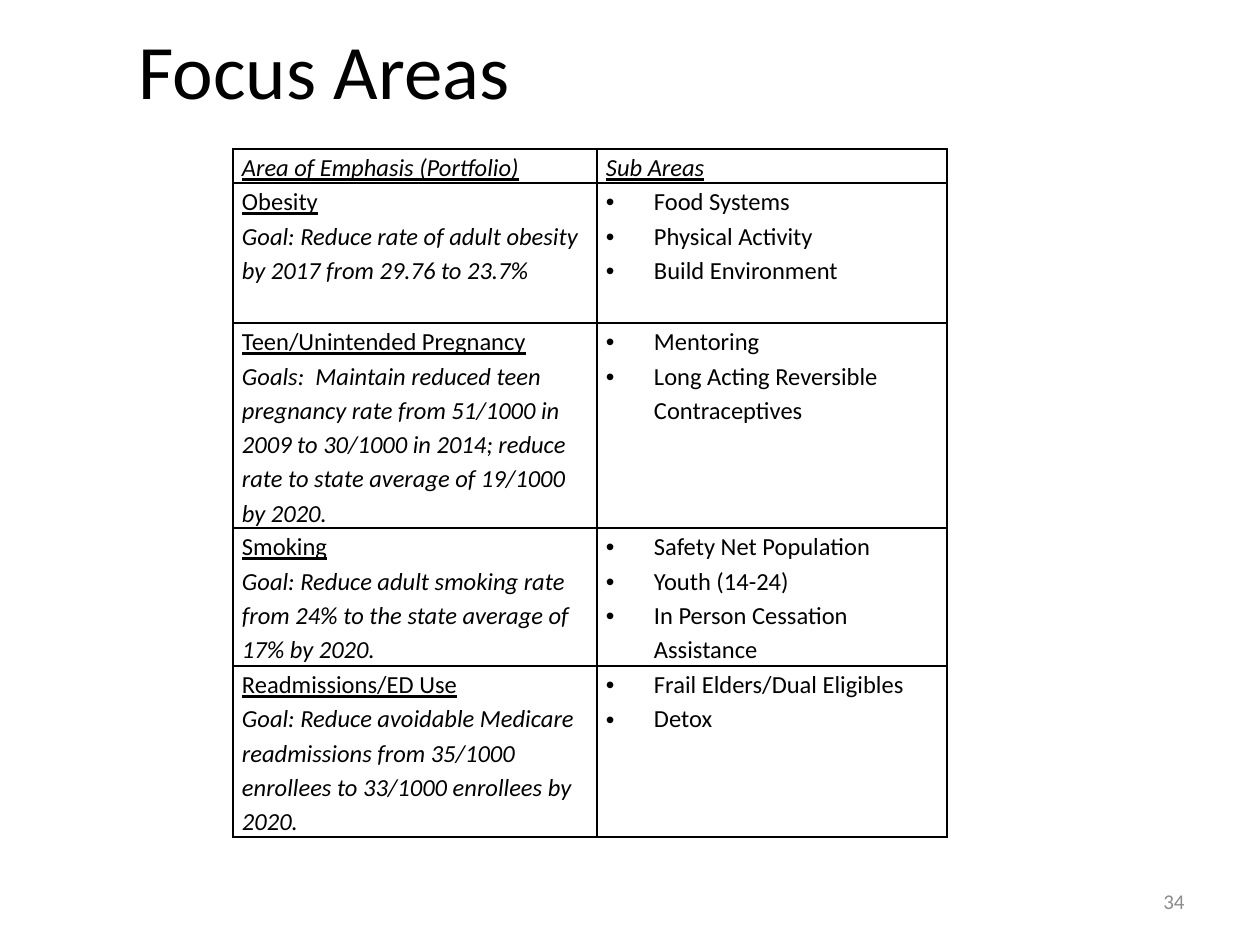
from pptx import Presentation
from pptx.dml.color import RGBColor
from pptx.enum.text import MSO_ANCHOR as Anchor, PP_ALIGN as Align
from pptx.oxml.ns import qn
from pptx.util import Emu, Pt
from lxml.etree import SubElement, Element

EMU_PER_PX = 914400 // 126
FONT = "Calibri"
BLACK = RGBColor(0x00, 0x00, 0x00)
GRAY = RGBColor(0x8C, 0x8C, 0x8C)

COLUMN_WIDTHS = [364, 350]
ROW_HEIGHTS = [34, 140, 205, 138, 171]
HEADINGS = ["Area of Emphasis (Portfolio)", "Sub Areas"]
FOCUS_AREAS = [
    ("Obesity",
     "Goal: Reduce rate of adult obesity by 2017 from 29.76 to 23.7%",
     ["Food Systems", "Physical Activity", "Build Environment"]),
    ("Teen/Unintended Pregnancy",
     "Goals:  Maintain reduced teen pregnancy rate from 51/1000 in 2009 "
     "to 30/1000 in 2014; reduce rate to state average of 19/1000 by 2020.",
     ["Mentoring", "Long Acting Reversible Contraceptives"]),
    ("Smoking",
     "Goal: Reduce adult smoking rate from 24% to the state average of 17% by 2020.",
     ["Safety Net Population", "Youth (14-24)", "In Person Cessation Assistance"]),
    ("Readmissions/ED Use",
     "Goal: Reduce avoidable Medicare readmissions from 35/1000 enrollees "
     "to 33/1000 enrollees by 2020.",
     ["Frail Elders/Dual Eligibles", "Detox"]),
]


def px(length):
    return Emu(length * EMU_PER_PX)


def add_bullet(paragraph, indent=48):
    properties = paragraph._p.get_or_add_pPr()
    properties.set("marL", str(px(indent)))
    properties.set("indent", str(-px(indent)))
    SubElement(properties, qn("a:buFont"), typeface="Arial")
    SubElement(properties, qn("a:buChar"), char="•")


def write(frame, text, first=True, size=14, color=BLACK, italic=False,
          underline=False, bullet=False, align=Align.LEFT, spacing=1.15):
    paragraph = frame.paragraphs[0] if first else frame.add_paragraph()
    if bullet:
        add_bullet(paragraph)
    paragraph.alignment = align
    paragraph.line_spacing = spacing
    run = paragraph.add_run()
    run.text = text
    font = run.font
    font.name, font.size, font.bold = FONT, Pt(size), False
    font.italic, font.underline = italic, underline
    font.color.rgb = color


def add_text_box(slide, left, top, width, height, text, **text_format):
    box = slide.shapes.add_textbox(px(left), px(top), px(width), px(height))
    frame = box.text_frame
    frame.word_wrap = True
    frame.vertical_anchor = Anchor.MIDDLE
    write(frame, text, **text_format)


def format_cell(cell):
    cell.margin_left = cell.margin_right = px(9)
    cell.margin_top = cell.margin_bottom = 0
    cell.fill.background()
    properties = cell._tc.get_or_add_tcPr()
    # Borders come before the fill in the cell properties
    for position, side in enumerate(("lnL", "lnR", "lnT", "lnB")):
        line = Element(qn(f"a:{side}"), w=str(Pt(1)))
        fill = SubElement(line, qn("a:solidFill"))
        SubElement(fill, qn("a:srgbClr"), val=str(BLACK))
        properties.insert(position, line)


def add_focus_table(slide, left, top):
    table = slide.shapes.add_table(
        len(ROW_HEIGHTS), len(COLUMN_WIDTHS), px(left), px(top),
        px(sum(COLUMN_WIDTHS)), px(sum(ROW_HEIGHTS))).table
    table.first_row = table.horz_banding = False
    for column, width in zip(table.columns, COLUMN_WIDTHS):
        column.width = px(width)
    for row, height in zip(table.rows, ROW_HEIGHTS):
        row.height = px(height)
    for cell in table.iter_cells():
        format_cell(cell)

    # Heading row
    for column, heading in enumerate(HEADINGS):
        write(table.cell(0, column).text_frame, heading, italic=True, underline=True)

    # One row for each focus area
    for row, (area, goal, sub_areas) in enumerate(FOCUS_AREAS, start=1):
        area_frame = table.cell(row, 0).text_frame
        write(area_frame, area, underline=True)
        write(area_frame, goal, first=False, italic=True)
        sub_frame = table.cell(row, 1).text_frame
        for index, sub_area in enumerate(sub_areas):
            write(sub_frame, sub_area, first=index == 0, bullet=True)


def main():
    presentation = Presentation()
    presentation.slide_width, presentation.slide_height = px(1260), px(945)
    slide = presentation.slides.add_slide(presentation.slide_layouts[6])

    # Title, set in by one tab
    add_text_box(slide, 63, 0, 1134, 149, "\tFocus Areas", size=44, spacing=0.9)
    add_focus_table(slide, 233, 149)
    # Slide number
    add_text_box(slide, 1124, 876, 73, 50, "34", size=12, color=GRAY,
                 align=Align.RIGHT, spacing=1.0)

    presentation.save("out.pptx")


if __name__ == "__main__":
    main()
